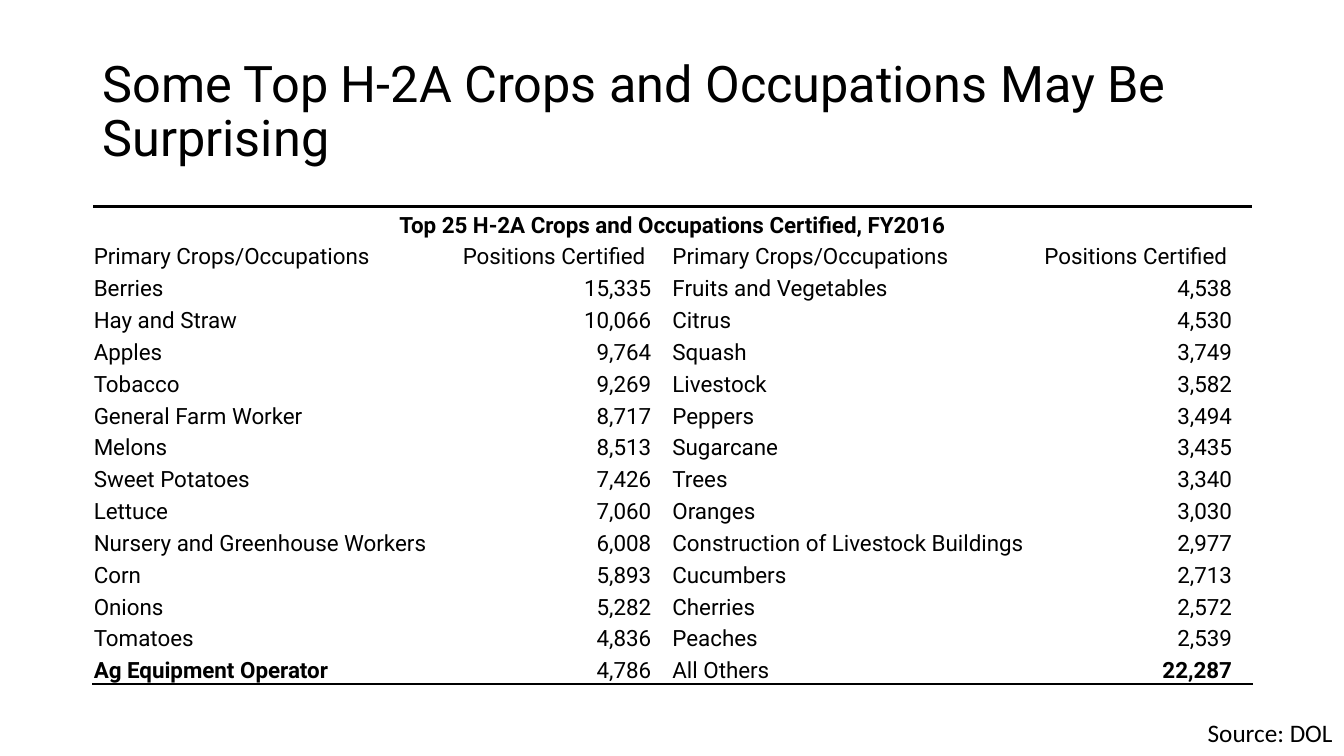
from lxml.etree import SubElement, Element
from pptx import Presentation
from pptx.dml.color import RGBColor
from pptx.enum.text import MSO_ANCHOR as Anchor, PP_ALIGN as Align
from pptx.oxml.ns import qn
from pptx.util import Inches, Pt

COLORS = {"text": "000000", "rule": "000000", "cell": "FFFFFF"}
TITLE = "Some Top H-2A Crops and Occupations May Be Surprising"
CAPTION = "Top 25 H-2A Crops and Occupations Certified, FY2016"
HEADINGS = ("Primary Crops/Occupations", "Positions Certified") * 2
CROPS = [
    ("Berries", "15,335", "Fruits and Vegetables", "4,538"),
    ("Hay and Straw", "10,066", "Citrus", "4,530"),
    ("Apples", "9,764", "Squash", "3,749"),
    ("Tobacco", "9,269", "Livestock", "3,582"),
    ("General Farm Worker", "8,717", "Peppers", "3,494"),
    ("Melons", "8,513", "Sugarcane", "3,435"),
    ("Sweet Potatoes", "7,426", "Trees", "3,340"),
    ("Lettuce", "7,060", "Oranges", "3,030"),
    ("Nursery and Greenhouse Workers", "6,008",
     "Construction of Livestock Buildings", "2,977"),
    ("Corn", "5,893", "Cucumbers", "2,713"),
    ("Onions", "5,282", "Cherries", "2,572"),
    ("Tomatoes", "4,836", "Peaches", "2,539"),
    ("Ag Equipment Operator", "4,786", "All Others", "22,287"),
]
BOLD = {CAPTION, "Ag Equipment Operator", "22,287"}
SOURCE = "Source: DOL"
COLUMN_WIDTHS = (3.62, 2.12, 3.65, 2.11)
LEFT, TABLE_TOP, WIDTH, TABLE_HEIGHT = 0.92, 2.05, 11.5, 4.74


def write(text_frame, text, size, font="Roboto", align=Align.LEFT):
    text_frame.text = text
    paragraph = text_frame.paragraphs[0]
    paragraph.alignment = align
    for run in paragraph.runs:
        run.font.name = font
        run.font.size = Pt(size)
        run.font.bold = text in BOLD
        run.font.color.rgb = RGBColor.from_string(COLORS["text"])
    return paragraph


def add_rule(cell, side):
    line = Element(qn(f"a:{side}"), w=str(Pt(2)))
    fill = SubElement(line, qn("a:solidFill"))
    SubElement(fill, qn("a:srgbClr"), val=COLORS["rule"])
    cell._tc.get_or_add_tcPr().insert(0, line)


def fill_cell(cell, text, align, left=0.01, right=0.01):
    cell.margin_left, cell.margin_right = Inches(left), Inches(right)
    cell.margin_top, cell.margin_bottom = Inches(0.01), 0
    cell.vertical_anchor = Anchor.BOTTOM
    cell.fill.solid()
    cell.fill.fore_color.rgb = RGBColor.from_string(COLORS["cell"])
    write(cell.text_frame, text, 16, align=align)


def add_crop_table(slide):
    rows = [(CAPTION, "", "", ""), HEADINGS, *CROPS]
    table = slide.shapes.add_table(
        len(rows), len(COLUMN_WIDTHS), Inches(LEFT), Inches(TABLE_TOP),
        Inches(WIDTH), Inches(TABLE_HEIGHT)).table
    table.first_row = table.horz_banding = False
    for column, width in zip(table.columns, COLUMN_WIDTHS):
        column.width = Inches(width)
    for row_index, row in enumerate(rows):
        for column_index, text in enumerate(row):
            cell = table.cell(row_index, column_index)
            is_number_column = column_index % 2 == 1
            if row_index == 0:
                fill_cell(cell, text, Align.CENTER)
                add_rule(cell, "lnT")
            elif row_index == 1 and is_number_column:
                fill_cell(cell, text, Align.LEFT, left=0.05)
            elif is_number_column:
                fill_cell(cell, text, Align.RIGHT, right=0.2)
            else:
                fill_cell(cell, text, Align.LEFT)
            if row_index == len(rows) - 1:
                add_rule(cell, "lnB")
    table.cell(0, 0).merge(table.cell(0, len(COLUMN_WIDTHS) - 1))


def main():
    presentation = Presentation()
    presentation.slide_width = Inches(13.33)
    presentation.slide_height = Inches(7.5)
    slide = presentation.slides.add_slide(presentation.slide_layouts[6])

    title = slide.shapes.add_textbox(
        Inches(LEFT), Inches(0.4), Inches(WIDTH), Inches(1.45)).text_frame
    title.word_wrap = True
    title.vertical_anchor = Anchor.MIDDLE
    write(title, TITLE, 36).line_spacing = 0.9

    add_crop_table(slide)

    source = slide.shapes.add_textbox(
        Inches(11.88), Inches(7.07), Inches(1.46), Inches(0.4)).text_frame
    source.word_wrap = False
    write(source, SOURCE, 18, font="Calibri")

    presentation.save("out.pptx")


if __name__ == "__main__":
    main()
